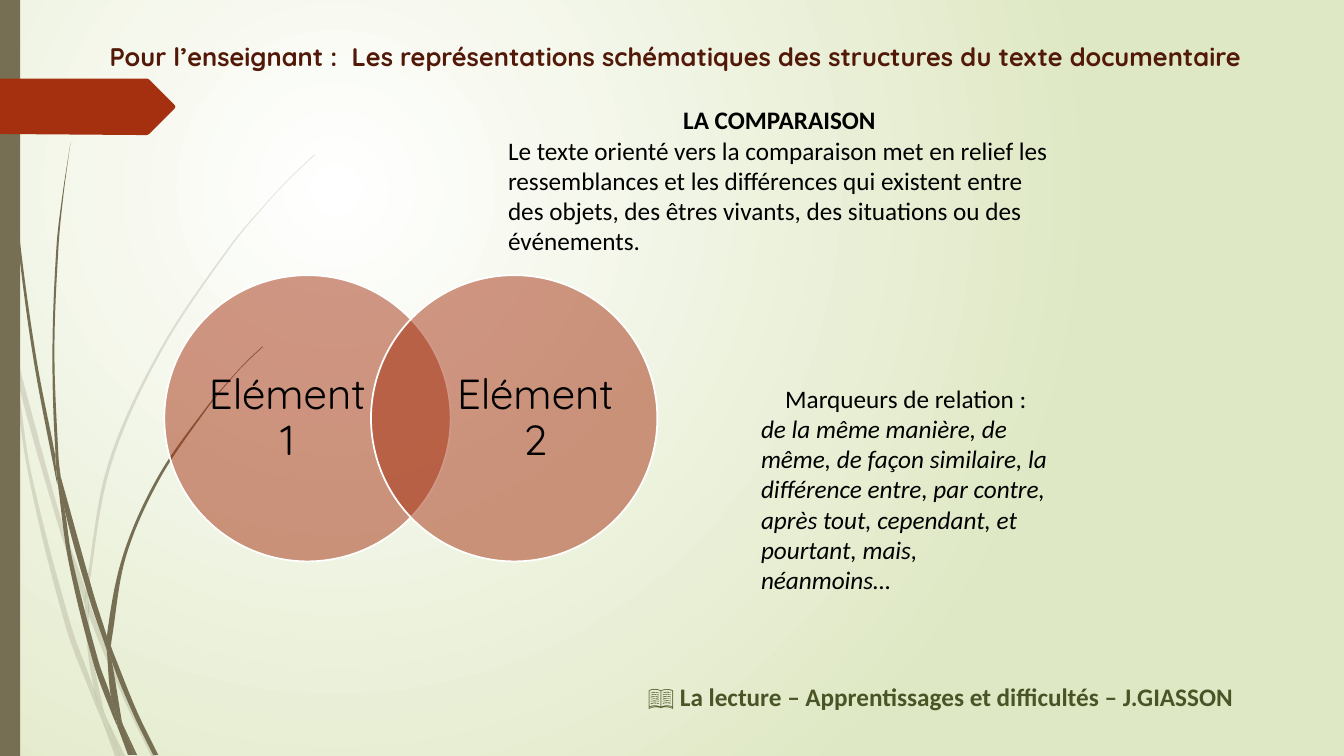
from math import cos, hypot, radians

from lxml.etree import SubElement
from pptx import Presentation
from pptx.dml.color import RGBColor
from pptx.enum.shapes import MSO_SHAPE
from pptx.enum.text import MSO_ANCHOR, MSO_AUTO_SIZE, PP_ALIGN
from pptx.oxml.ns import qn
from pptx.util import Inches, Pt

OLIVE, RUST, BLACK, WHITE = "766F54", "A53010", "000000", "FFFFFF"
BACKGROUND = (WHITE, "DFE8C4")

TITLE = "Pour l’enseignant :  Les représentations schématiques des structures du texte documentaire"
COMPARISON_HEADING = "LA COMPARAISON"
COMPARISON_TEXT = (
    "Le texte orienté vers la comparaison met en relief les ressemblances et les différences "
    "qui existent entre des objets, des êtres vivants, des situations ou des événements."
)
MARKERS_HEADING = "Marqueurs de relation :"
MARKERS_TEXT = (
    "de la même manière, de même, de façon similaire, la différence entre, par contre, "
    "après tout, cependant, et pourtant, mais, néanmoins…"
)
SOURCE = "📖 La lecture – Apprentissages et difficultés – J.GIASSON"

# Venn circles: label and left edge of the label
CIRCLES = [("Elément 1", 2.03), ("Elément 2", 4.49)]
CIRCLE_LEFT, CIRCLE_TOP, CIRCLE_SIZE, CIRCLE_STEP = 1.63, 2.73, 2.84, 2.05

# Grass outlines in inches; the curves run through these points
PALE_GRASS = [
    [(0.11, 3.5), (0.09, 3.22), (0, 2.82), (0, 2.99), (0.1, 3.44)],
    [(0.58, 5.22), (0.84, 5.99), (0.85, 5.86), (0.62, 5.2), (0.14, 3.45), (0.17, 3.76)],
    [(0.92, 6.07), (0.88, 5.96), (0.88, 6.1), (1.23, 6.94), (1.5, 7.5), (1.55, 7.5), (1.27, 6.92)],
    [(1.19, 7.5), (1.24, 7.5), (1.05, 7.11)],
    [(0.93, 6.83), (0.7, 6.19), (0.31, 4.69), (0.17, 3.76), (0.11, 3.5), (0.28, 4.7),
     (0.65, 6.21), (0.92, 6.93), (1.01, 7.14), (0.99, 7.07)],
    [(0.84, 5.99), (0.87, 6.46), (0.93, 6.83), (0.96, 6.92), (1.05, 7.11), (1.03, 7.06),
     (0.91, 6.46), (0.88, 6.1), (0.88, 6.08)],
    [(0.88, 5.84), (1.1, 4.62), (1.6, 3.49), (2.29, 2.45), (2.68, 1.98), (2.9, 1.75),
     (3.12, 1.54), (3.12, 1.53), (2.89, 1.75), (2.68, 1.97), (2.28, 2.44), (1.58, 3.48),
     (1.07, 4.61), (0.85, 5.84), (0.85, 5.86), (0.88, 5.96)],
    [(1.01, 7.14), (1.14, 7.5), (1.19, 7.5)],
    [(0.88, 6.08), (0.88, 6.1), (0.88, 5.96), (0.85, 5.86), (0.84, 5.99)],
    [(0.96, 6.92), (0.93, 6.83), (0.99, 7.07), (1.01, 7.14), (1.19, 7.5), (1.05, 7.11)],
]
DARK_GRASS = [
    [(0.07, 1.1), (0.17, 2.33), (0.33, 3.55), (0.56, 4.77), (0.57, 4.81), (0.55, 4.57),
     (0.55, 4.53), (0.36, 3.55), (0.19, 2.32), (0.08, 1.09), (0.05, 0.48), (0.04, 0),
     (0.03, 0), (0.04, 0.48)],
    [(0.88, 5.92), (1.06, 6.45), (1.06, 6.33), (1.06, 6.31), (0.93, 5.9), (0.6, 4.72),
     (0.64, 5.05)],
    [(1.13, 6.49), (1.1, 6.41), (1.11, 6.56), (1.32, 7.08), (1.52, 7.49), (1.57, 7.49),
     (1.36, 7.06)],
    [(1.1, 6.91), (0.98, 6.57), (0.72, 5.56), (0.64, 5.05), (0.57, 4.77), (0.68, 5.57),
     (0.93, 6.59), (1.11, 7.08), (1.17, 7.22), (1.16, 7.17)],
    [(0.6, 4.72), (0.58, 4.53), (0.54, 3.49), (0.58, 2.45), (0.63, 1.93), (0.7, 1.41),
     (0.62, 1.93), (0.56, 2.45), (0.52, 3.49), (0.55, 4.49)],
    [(1.33, 7.49), (1.36, 7.49), (1.22, 7.19)],
    [(0.57, 4.77), (0.64, 5.05), (0.6, 4.72), (0.55, 4.49), (0.55, 4.53)],
    [(1.11, 6.33), (1.25, 5.52), (1.58, 4.76), (2.05, 4.06), (2.31, 3.74), (2.45, 3.59),
     (2.61, 3.44), (2.6, 3.44), (2.45, 3.58), (2.31, 3.73), (2.04, 4.05), (1.56, 4.74),
     (1.22, 5.51), (1.06, 6.31), (1.1, 6.41)],
    [(1.17, 7.22), (1.27, 7.49), (1.31, 7.49)],
    [(1.06, 6.45), (1.1, 6.91), (1.16, 7.06), (1.22, 7.19), (1.21, 7.16), (1.11, 6.56),
     (1.09, 6.51)],
    [(1.06, 6.45), (1.09, 6.51), (1.11, 6.56), (1.1, 6.41), (1.06, 6.31), (1.06, 6.33)],
    [(1.16, 7.06), (1.1, 6.91), (1.16, 7.17), (1.17, 7.22), (1.3, 7.49), (1.33, 7.49),
     (1.22, 7.19)],
]
RIBBON = [(0, 0.78), (1.46, 0.78), (1.48, 0.79), (1.73, 1.04), (1.74, 1.06), (1.73, 1.08),
          (1.48, 1.33), (1.46, 1.34), (1.36, 1.34), (0, 1.33)]
CORNER_COSINE = cos(radians(40))


def color(hex_value):
    return RGBColor.from_string(hex_value)


def style_shape(shape, fill, opacity=100, line=None):
    shape.shadow.inherit = False
    shape.fill.solid()
    shape.fill.fore_color.rgb = color(fill)
    if opacity < 100:
        fill_color = shape._element.spPr.find(qn("a:solidFill"))[0]
        SubElement(fill_color, qn("a:alpha"), val=str(opacity * 1000))
    if line:
        shape.line.color.rgb = color(line)
        shape.line.width = Pt(1.25)
    else:
        shape.line.fill.background()


def direction_at(points, index):
    """Unit tangent of the closed outline at a point, or None at a corner."""
    before, here, after = (points[(index + shift) % len(points)] for shift in (-1, 0, 1))
    ax, ay = here[0] - before[0], here[1] - before[1]
    bx, by = after[0] - here[0], after[1] - here[1]
    if ax * bx + ay * by < CORNER_COSINE * hypot(ax, ay) * hypot(bx, by):
        return None
    length = hypot(ax + bx, ay + by)
    return (ax + bx) / length, (ay + by) / length


def curve_handles(points, index):
    """The two Bezier control points of the side that starts at a point."""
    following = (index + 1) % len(points)
    start, end = points[index], points[following]
    chord = end[0] - start[0], end[1] - start[1]
    reach = hypot(*chord) / 3
    handles = []
    for base, corner, sign in ((start, index, 1), (end, following, -1)):
        direction = direction_at(points, corner)
        shift = [reach * part for part in direction] if direction else [part / 3 for part in chord]
        handles.append((base[0] + sign * shift[0], base[1] + sign * shift[1]))
    return handles


def add_outline(shapes, points, fill, opacity=100, curved=False):
    corners = [(Inches(x), Inches(y)) for x, y in points]
    builder = shapes.build_freeform(*corners[0])
    builder.add_line_segments(corners[1:] + corners[:1] if curved else corners[1:], close=True)
    shape = builder.convert_to_shape()
    style_shape(shape, fill, opacity)
    if curved:
        left, top = (min(values) for values in zip(*corners))
        for index, side in enumerate(shape._element.xpath(".//a:lnTo")):
            side.tag = qn("a:cubicBezTo")
            for position, (x, y) in enumerate(curve_handles(corners, index)):
                handle = SubElement(side, qn("a:pt"), x=str(round(x - left)), y=str(round(y - top)))
                side.insert(position, handle)


def add_text(shapes, box, paragraphs, size=18, font="Calibri", text_color=BLACK,
             anchor=MSO_ANCHOR.TOP, line_spacing=None, margin=None, grow=False):
    """Add a text box; each paragraph is (text, alignment, bold, italic)."""
    frame = shapes.add_textbox(*map(Inches, box)).text_frame
    frame.word_wrap = True
    frame.vertical_anchor = anchor
    if grow:
        frame.auto_size = MSO_AUTO_SIZE.SHAPE_TO_FIT_TEXT
    if margin is not None:
        frame.margin_left = frame.margin_right = Inches(margin)
        frame.margin_top = frame.margin_bottom = Inches(margin)
    for index, (text, alignment, bold, italic) in enumerate(paragraphs):
        paragraph = frame.add_paragraph() if index else frame.paragraphs[0]
        paragraph.alignment = alignment
        if line_spacing:
            paragraph.line_spacing = line_spacing
        run = paragraph.add_run()
        run.text = text
        run.font.name, run.font.size = font, Pt(size)
        run.font.bold, run.font.italic = bold, italic
        run.font.color.rgb = color(text_color)


def set_radial_background(slide, colors):
    fill = slide.background.fill
    fill.gradient()
    for stop, stop_color, position in zip(fill.gradient_stops, colors, (0, 1)):
        stop.color.rgb = color(stop_color)
        stop.position = position
    gradient = slide.element.xpath(".//p:bg//a:gradFill")[0]
    gradient.remove(gradient.find(qn("a:lin")))
    circle = SubElement(gradient, qn("a:path"), {"path": "circle"})
    SubElement(circle, qn("a:fillToRect"), l="50000", t="50000", r="100000", b="100000")


def main():
    presentation = Presentation()
    presentation.slide_width, presentation.slide_height = Inches(13.33), Inches(7.5)
    slide = presentation.slides.add_slide(presentation.slide_layouts[6])
    shapes = slide.shapes
    set_radial_background(slide, BACKGROUND)

    for blades, opacity in ((PALE_GRASS, 20), (DARK_GRASS, 100)):
        grass = shapes.add_group_shape().shapes
        for blade in blades:
            add_outline(grass, blade, OLIVE, opacity, curved=True)
    side_bar = shapes.add_shape(MSO_SHAPE.RECTANGLE, 0, 0, Inches(0.2), Inches(7.5))
    style_shape(side_bar, OLIVE)
    add_outline(shapes, RIBBON, RUST)

    venn = shapes.add_group_shape().shapes
    for index, (label, label_left) in enumerate(CIRCLES):
        box = (CIRCLE_LEFT + index * CIRCLE_STEP, CIRCLE_TOP, CIRCLE_SIZE, CIRCLE_SIZE)
        style_shape(venn.add_shape(MSO_SHAPE.OVAL, *map(Inches, box)), RUST, 50, WHITE)
        add_text(venn, (label_left, 3.07, 1.64, 2.17),
                 [(label, PP_ALIGN.CENTER, False, False)], size=30, font="Quicksand",
                 anchor=MSO_ANCHOR.MIDDLE, line_spacing=0.9, margin=0)

    add_text(shapes, (4.94, 0.99, 5.58, 1.62),
             [(COMPARISON_HEADING, PP_ALIGN.CENTER, True, False),
              (COMPARISON_TEXT, PP_ALIGN.LEFT, False, False)], grow=True)
    add_text(shapes, (7.45, 3.75, 3.07, 2.22),
             [(MARKERS_HEADING, PP_ALIGN.CENTER, False, False),
              (MARKERS_TEXT, PP_ALIGN.LEFT, False, True)], grow=True)
    add_text(shapes, (5.64, 6.71, 6.69, 0.4), [(SOURCE, PP_ALIGN.RIGHT, True, False)],
             text_color="495526", grow=True)
    add_text(shapes, (0.92, 0.4, 11.5, 0.4), [(TITLE, PP_ALIGN.RIGHT, True, False)],
             size=18.2, font="Quicksand", text_color="521808",
             anchor=MSO_ANCHOR.MIDDLE, line_spacing=0.7)
    presentation.save("out.pptx")


if __name__ == "__main__":
    main()
